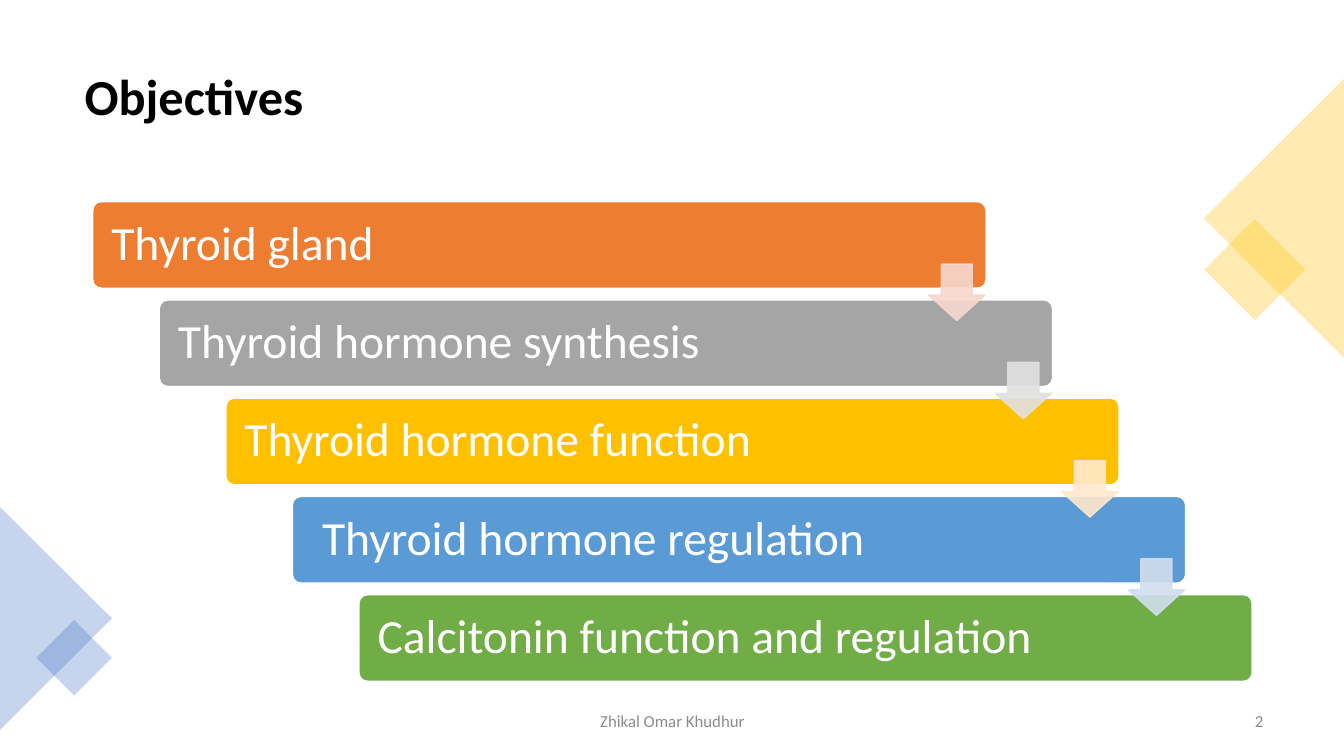
from lxml import etree
from pptx import Presentation
from pptx.dml.color import RGBColor
from pptx.enum.shapes import MSO_SHAPE as Shape
from pptx.enum.text import MSO_ANCHOR as Anchor, PP_ALIGN as Align
from pptx.oxml.ns import qn
from pptx.util import Inches, Pt

FONT = "Calibri"
GOLD, BLUE, WHITE, GRAY = "FFC000", "4472C4", "FFFFFF", "8C8C8C"

# Each step: text, bar colour, colour of the arrow to the next step, extra indent
STEPS = [
    ("Thyroid gland", "ED7D31", "F8D7CE", 0),
    ("Thyroid hormone synthesis", "A5A5A5", "E1E1E1", 0),
    ("Thyroid hormone function", GOLD, "FFE8CC", 0),
    ("Thyroid hormone regulation", "5B9BD5", "D2DEEF", 0.11),
    ("Calcitonin function and regulation", "70AD47", None, 0),
]
STEP_X, STEP_Y = 0.66, 0.975

# Corner decorations: shape, left, top, width, height, rotation, colour
DECORATIONS = [
    (Shape.RECTANGLE, 12.09, 2.32, 0.71, 0.71, 45, GOLD),
    (Shape.ISOSCELES_TRIANGLE, 11.25, 1.47, 2.77, 1.39, 270, GOLD),
    (Shape.ISOSCELES_TRIANGLE, -0.55, 5.58, 2.21, 1.11, 90, BLUE),
    (Shape.RECTANGLE, 0.47, 6.26, 0.53, 0.53, 45, BLUE),
]


def rgb(color):
    return RGBColor.from_string(color)


def add_figure(page, kind, left, top, width, height, color, line=None, opacity=100):
    figure = page.shapes.add_shape(
        kind, Inches(left), Inches(top), Inches(width), Inches(height))
    figure.shadow.inherit = False
    figure.fill.solid()
    figure.fill.fore_color.rgb = rgb(color)
    if line:
        figure.line.color.rgb = rgb(line)
        figure.line.width = Pt(1)
    else:
        figure.line.fill.background()
    if opacity < 100:
        for tint in figure._element.spPr.iter(qn("a:srgbClr")):
            etree.SubElement(tint, qn("a:alpha"), val=str(opacity * 1000))
    return figure


def write(box, text, size, color, align=Align.LEFT, bold=False):
    frame = box.text_frame
    frame.word_wrap = True
    frame.vertical_anchor = Anchor.MIDDLE
    para = frame.paragraphs[0]
    para.text = text
    para.alignment = align
    font = para.font
    font.name, font.size, font.bold = FONT, Pt(size), bold
    font.color.rgb = rgb(color)


def add_label(page, left, top, width, height, *style, **options):
    box = page.shapes.add_textbox(
        Inches(left), Inches(top), Inches(width), Inches(height))
    write(box, *style, **options)


def add_bar(page, index, text, color, indent):
    bar = add_figure(page, Shape.ROUNDED_RECTANGLE, 0.92 + index * STEP_X,
                     2 + index * STEP_Y, 8.86, 0.86, color, line=WHITE)
    bar.adjustments[0] = 0.1
    write(bar, text, 34, WHITE)
    bar.text_frame.margin_left = Inches(0.16 + indent)
    bar.text_frame.paragraphs[0].line_spacing = 0.9


def add_arrow(page, index, color):
    arrow = add_figure(page, Shape.DOWN_ARROW, 9.21 + index * STEP_X,
                       2.62 + index * STEP_Y, 0.56, 0.56, color,
                       line=color, opacity=90)
    arrow.adjustments[0] = 0.55
    arrow.adjustments[1] = 0.45


def main():
    deck = Presentation()
    deck.slide_width, deck.slide_height = Inches(13.33), Inches(7.5)
    page = deck.slides.add_slide(deck.slide_layouts[6])

    # Title and corner decorations
    add_label(page, 0.74, 0.57, 11.93, 0.75, "Objectives", 36, "000000", bold=True)
    for kind, left, top, width, height, rotation, color in DECORATIONS:
        figure = add_figure(page, kind, left, top, width, height, color, opacity=30)
        figure.rotation = rotation

    # Staircase of objectives, with the arrows on top of the bars
    for index, (text, color, _, indent) in enumerate(STEPS):
        add_bar(page, index, text, color, indent)
    for index, (_, _, color, _) in enumerate(STEPS[:-1]):
        add_arrow(page, index, color)

    # Footer and page number
    add_label(page, 4.42, 6.95, 4.5, 0.4, "Zhikal Omar Khudhur", 12, GRAY,
              align=Align.CENTER)
    add_label(page, 9.63, 6.95, 3, 0.4, "2", 12, GRAY, align=Align.RIGHT)

    deck.save("out.pptx")


if __name__ == "__main__":
    main()
